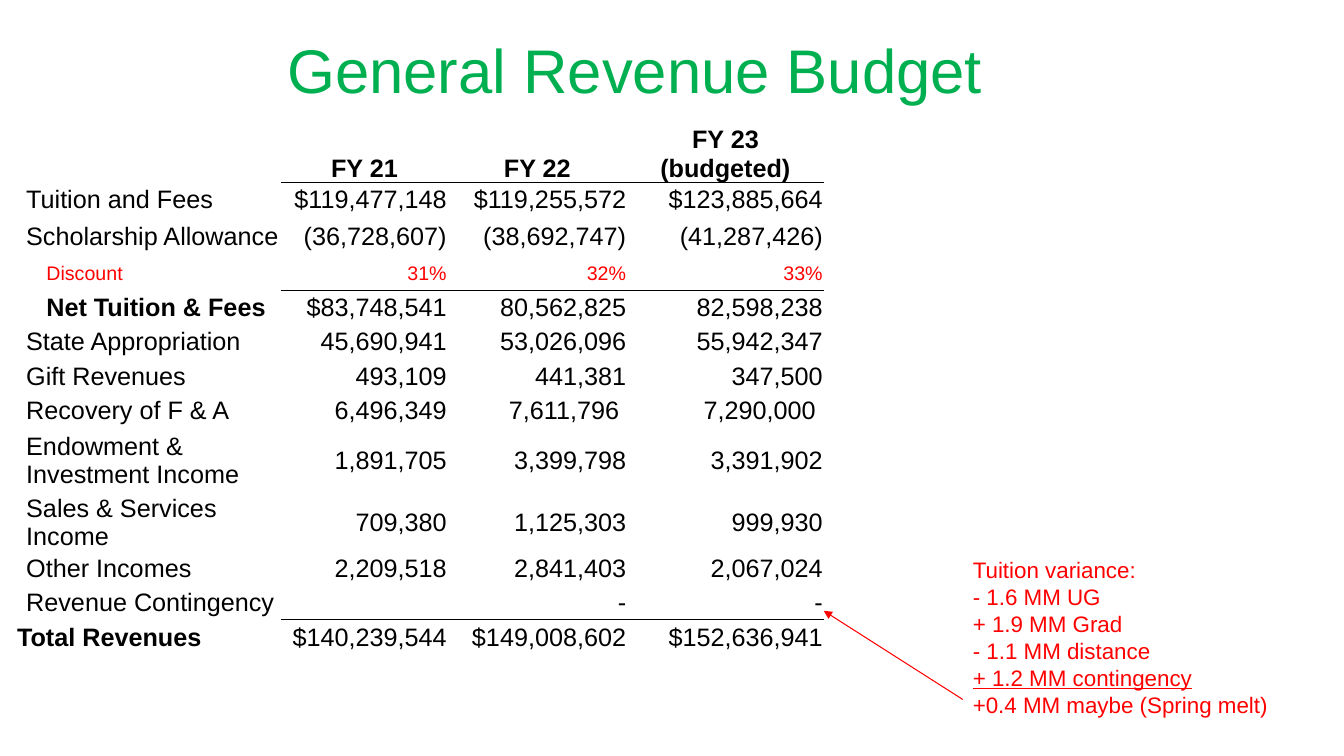
from lxml.etree import SubElement
from pptx import Presentation
from pptx.dml.color import RGBColor
from pptx.enum.dml import MSO_LINE
from pptx.enum.shapes import MSO_CONNECTOR, MSO_SHAPE
from pptx.enum.text import MSO_ANCHOR as Anchor, MSO_AUTO_SIZE as AutoSize, PP_ALIGN as Align
from pptx.oxml import parse_xml
from pptx.oxml.ns import nsdecls, qn
from pptx.util import Inches, Pt

COLORS = {"title": "00B050", "text": "000000", "accent": "FF0000", "paper": "FFFFFF"}
HEADINGS = ["", "FY 21", "FY 22", "FY 23 (budgeted)"]
BUDGET = [
    ["Tuition and Fees", "$119,477,148", "$119,255,572", "$123,885,664"],
    ["Scholarship Allowance", "(36,728,607)", "(38,692,747)", "(41,287,426)"],
    ["Discount", "31%", "32%", "33%"],
    ["Net Tuition & Fees", "$83,748,541", "80,562,825", "82,598,238"],
    ["State Appropriation", "45,690,941", "53,026,096", "55,942,347"],
    ["Gift Revenues", "493,109", "441,381", "347,500"],
    ["Recovery of F & A", "6,496,349", "7,611,796 ", "7,290,000 "],
    ["Endowment & Investment Income", "1,891,705", "3,399,798", "3,391,902"],
    ["Sales & Services Income", "709,380", "1,125,303", "999,930"],
    ["Other Incomes", "2,209,518", "2,841,403", "2,067,024"],
    ["Revenue Contingency", "", "-", "-"],
    ["Total Revenues", "$140,239,544", "$149,008,602", "$152,636,941"],
]
COLUMN_WIDTHS = [2.63, 1.65, 1.78, 1.95]
ROW_HEIGHT = 0.34
SPECIAL_HEIGHTS = {"": 0.58, "Scholarship Allowance": 0.39,
                   "Endowment & Investment Income": 0.66, "Sales & Services Income": 0.56}
LABEL_INDENTS = {"Discount": 0.3, "Net Tuition & Fees": 0.3, "Total Revenues": 0.01}
BOLD_LABELS = {"Net Tuition & Fees", "Total Revenues"}
RULED_LABELS = {"", "Discount", "Revenue Contingency"}
VARIANCE = ["Tuition variance:", "- 1.6 MM UG", "+ 1.9 MM Grad", "- 1.1 MM distance",
            "+ 1.2 MM contingency", "+0.4 MM maybe (Spring melt)"]


def rgb(name):
    return RGBColor.from_string(COLORS[name])


def write(paragraph, text, size=18, color="text", bold=False, underline=False,
          align=Align.LEFT, spacing=None, font="Arial"):
    paragraph.alignment = align
    paragraph.line_spacing = spacing
    paragraph.font.size = Pt(size)
    if text:
        run = paragraph.add_run()
        run.text = text
        run.font.name = font
        run.font.size = Pt(size)
        run.font.bold = bold
        run.font.underline = underline
        run.font.color.rgb = rgb(color)


class BudgetSlide:
    def __init__(self, deck):
        self.slide = deck.slides.add_slide(deck.slide_layouts[5])
        self.shapes = self.slide.shapes

    def title(self, text, left, top, width, height):
        heading = self.shapes.title
        heading.left, heading.top = Inches(left), Inches(top)
        heading.width, heading.height = Inches(width), Inches(height)
        frame = heading.text_frame
        frame.auto_size = AutoSize.NONE
        frame.vertical_anchor = Anchor.MIDDLE
        write(frame.paragraphs[0], text, size=44, color="title", align=Align.CENTER, spacing=0.9)

    def rule(self, cell, side):
        edge = parse_xml(
            f'<a:{side} {nsdecls("a")} w="12700"><a:solidFill>'
            f'<a:srgbClr val="{COLORS["text"]}"/></a:solidFill></a:{side}>')
        cell.fill._xPr.insert(0, edge)

    def cell(self, cell, text, indent=0.01, anchor=Anchor.MIDDLE, **style):
        cell.fill.solid()
        cell.fill.fore_color.rgb = rgb("paper")
        cell.margin_left = Inches(indent)
        cell.margin_right = cell.margin_top = Inches(0.01)
        cell.margin_bottom = 0
        cell.vertical_anchor = anchor
        write(cell.text_frame.paragraphs[0], text, **style)

    def table(self, rows, left, top):
        heights = [SPECIAL_HEIGHTS.get(row[0], ROW_HEIGHT) for row in rows]
        table = self.shapes.add_table(
            len(rows), len(COLUMN_WIDTHS), Inches(left), Inches(top),
            Inches(sum(COLUMN_WIDTHS)), Inches(sum(heights))).table
        table.first_row = table.horz_banding = False
        for column, width in zip(table.columns, COLUMN_WIDTHS):
            column.width = Inches(width)
        for r, (values, height) in enumerate(zip(rows, heights)):
            table.rows[r].height = Inches(height)
            label = values[0]
            style = {"size": 14, "color": "accent"} if label == "Discount" else {}
            for c, value in enumerate(values):
                cell = table.cell(r, c)
                if r == 0:
                    self.cell(cell, value, anchor=Anchor.BOTTOM, bold=True, align=Align.CENTER)
                elif c == 0:
                    self.cell(cell, value, indent=LABEL_INDENTS.get(label, 0.1),
                              bold=label in BOLD_LABELS, **style)
                else:
                    self.cell(cell, value, align=Align.RIGHT, **style)
                if c and label in RULED_LABELS:
                    self.rule(cell, "lnB")
                if c and r and rows[r - 1][0] in RULED_LABELS:
                    self.rule(cell, "lnT")

    def note(self, lines, left, top, width, height):
        box = self.shapes.add_shape(MSO_SHAPE.RECTANGLE, Inches(left), Inches(top),
                                    Inches(width), Inches(height))
        box.shadow.inherit = False
        box.fill.solid()
        box.fill.fore_color.rgb = rgb("paper")
        box.line.fill.background()
        frame = box.text_frame
        frame.word_wrap = True
        frame.auto_size = AutoSize.SHAPE_TO_FIT_TEXT
        frame.vertical_anchor = Anchor.TOP
        for i, line in enumerate(lines):
            paragraph = frame.add_paragraph() if i else frame.paragraphs[0]
            write(paragraph, line, size=16, color="accent", underline="contingency" in line)

    def arrow(self, start, end):
        points = [Inches(value) for value in (*start, *end)]
        arrow = self.shapes.add_connector(MSO_CONNECTOR.STRAIGHT, *points)
        arrow.line.color.rgb = rgb("accent")
        arrow.line.width = Pt(0.75)
        arrow.line.dash_style = MSO_LINE.SOLID
        SubElement(arrow.line._get_or_add_ln(), qn("a:tailEnd"), type="triangle")
        SubElement(arrow._element.spPr, qn("a:effectLst"))


def main():
    deck = Presentation()
    deck.slide_width, deck.slide_height = Inches(13.33), Inches(7.5)
    page = BudgetSlide(deck)
    page.title("General Revenue Budget", 0.55, 0, 11.5, 1.45)
    page.table([HEADINGS, *BUDGET], 0.16, 1.23)
    page.note(VARIANCE, 9.55, 5.47, 3.41, 1.72)
    page.arrow((9.55, 6.94), (8.17, 6.06))
    deck.save("out.pptx")


if __name__ == "__main__":
    main()
